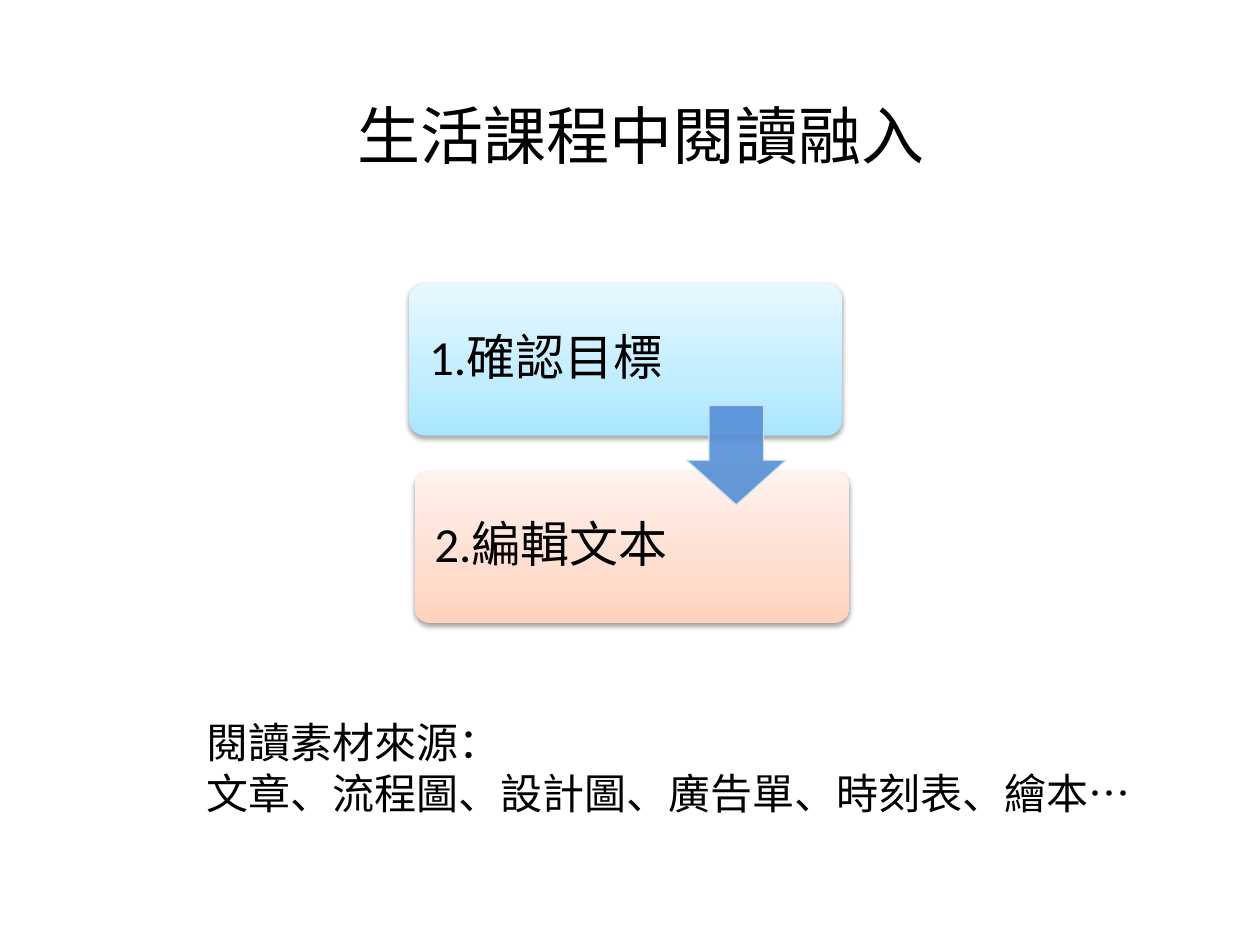
from dataclasses import dataclass

from pptx import Presentation
from pptx.dml.color import RGBColor
from pptx.enum.shapes import MSO_SHAPE as Shape
from pptx.enum.text import MSO_ANCHOR as Anchor, MSO_AUTO_SIZE as Fit, PP_ALIGN as Align
from pptx.oxml import parse_xml
from pptx.oxml.ns import nsdecls, qn
from pptx.util import Pt

BLACK = RGBColor(0x00, 0x00, 0x00)
BLUE = RGBColor(0x55, 0x8E, 0xD5)
PALE = RGBColor(0xD0, 0xE3, 0xEA)
SKY = (RGBColor(0xA7, 0xE6, 0xFF), RGBColor(0xC1, 0xED, 0xFF), RGBColor(0xE7, 0xF8, 0xFF))
PEACH = (RGBColor(0xFF, 0xD2, 0xBD), RGBColor(0xFF, 0xDE, 0xD0), RGBColor(0xFF, 0xF2, 0xED))
STOPS = (0, 35, 100)  # gradient positions in percent
PAD = 8.64


@dataclass
class Step:
    text: str
    left: float
    top: float
    width: float
    label: float  # width of the text area
    tints: tuple


STEPS = [
    Step("1.確認目標", 234, 162, 247, 175.7, SKY),
    Step("2.編輯文本", 237, 269, 248.4, 155.5, PEACH),
]
CARD_H = 87
INSET = 2.6


def style(frame, size: float, name: str) -> None:
    for para in frame.paragraphs:
        for run in para.runs:
            run.font.size = Pt(size)
            run.font.name = name
            run.font.color.rgb = BLACK


def shade(shape, tints: tuple) -> None:
    """Fill upwards through the tints and add a soft shadow below."""
    shape.fill.gradient()
    shape.fill.gradient_angle = 90
    stops = "".join(
        f'<a:gs pos="{pos * 1000}"><a:srgbClr val="{tint}"/></a:gs>'
        for pos, tint in zip(STOPS, tints)
    )
    props = shape.element.spPr
    old = props.find(qn("a:gradFill")).find(qn("a:gsLst"))
    old.getparent().replace(old, parse_xml(f'<a:gsLst {nsdecls("a")}>{stops}</a:gsLst>'))
    shape.line.fill.background()
    shape.shadow.inherit = False
    props.find(qn("a:effectLst")).append(parse_xml(
        f'<a:outerShdw {nsdecls("a")} blurRad="{Pt(3.1)}" dist="{Pt(1.6)}" dir="5400000" '
        f'rotWithShape="0"><a:srgbClr val="{BLACK}"><a:alpha val="38000"/></a:srgbClr>'
        "</a:outerShdw>"
    ))


def add_step(shapes, step: Step) -> None:
    card = shapes.add_shape(Shape.ROUNDED_RECTANGLE, Pt(step.left), Pt(step.top),
                            Pt(step.width), Pt(CARD_H))
    card.adjustments[0] = 0.1
    shade(card, step.tints)

    box = shapes.add_textbox(Pt(step.left + INSET), Pt(step.top + INSET),
                             Pt(step.label), Pt(CARD_H - 2 * INSET))
    frame = box.text_frame
    frame.word_wrap = True
    frame.vertical_anchor = Anchor.MIDDLE
    frame.margin_left = frame.margin_right = Pt(PAD)
    frame.margin_top = frame.margin_bottom = Pt(PAD)
    frame.text = step.text
    frame.paragraphs[0].line_spacing = 0.9
    style(frame, 28, "Calibri")


def add_arrow(shapes) -> None:
    arrow = shapes.add_shape(Shape.DOWN_ARROW, Pt(392.4), Pt(231.8), Pt(56.7), Pt(56.7))
    arrow.adjustments[0] = 0.55
    arrow.adjustments[1] = 0.45
    arrow.shadow.inherit = False
    arrow.fill.solid()
    arrow.fill.fore_color.rgb = BLUE
    arrow.line.color.rgb = PALE
    arrow.line.width = Pt(0.75)
    # Fill and line are both slightly see-through
    for color in arrow.element.spPr.iter(qn("a:srgbClr")):
        color.append(parse_xml(f'<a:alpha {nsdecls("a")} val="90000"/>'))


def main() -> None:
    deck = Presentation()
    deck.slide_width, deck.slide_height = Pt(720), Pt(540)
    slide = deck.slides.add_slide(deck.slide_layouts[5])
    shapes = slide.shapes

    # Title
    title = shapes.title
    title.left, title.top, title.width, title.height = Pt(42.5), Pt(31.7), Pt(648), Pt(90)
    frame = title.text_frame
    frame.text = "生活課程中閱讀融入"
    frame.vertical_anchor = Anchor.MIDDLE
    frame.paragraphs[0].alignment = Align.CENTER
    style(frame, 36, "Arial")

    # Steps and the arrow between them
    for step in STEPS:
        add_step(shapes, step)
    add_arrow(shapes)

    # Reading sources
    box = shapes.add_textbox(Pt(110.9), Pt(406), Pt(550), Pt(65.5))
    frame = box.text_frame
    frame.word_wrap = True
    frame.auto_size = Fit.SHAPE_TO_FIT_TEXT
    frame.text = "閱讀素材來源：\n文章、流程圖、設計圖、廣告單、時刻表、繪本…"
    style(frame, 24, "Calibri")

    deck.save("out.pptx")


if __name__ == "__main__":
    main()
